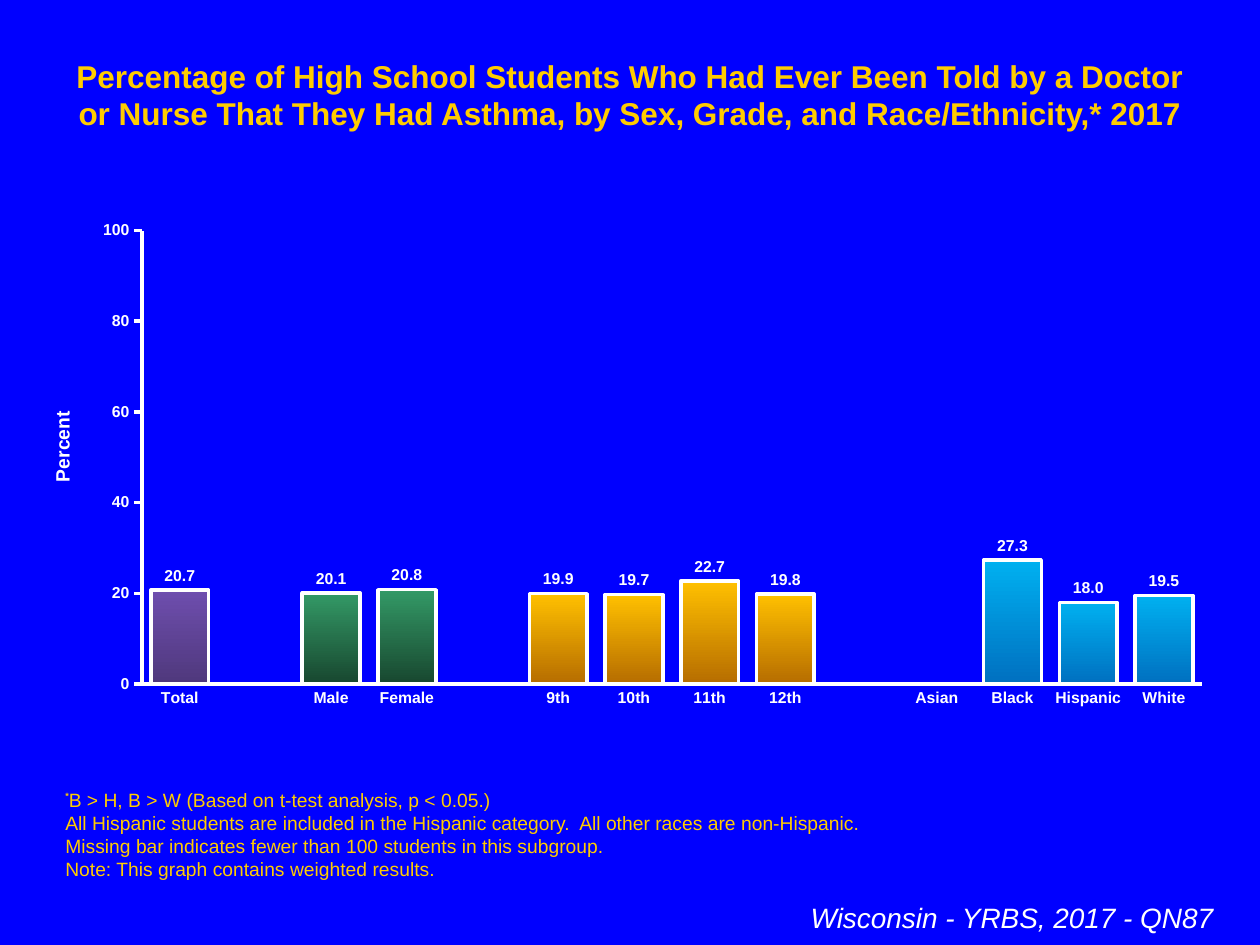
from lxml import etree
from pptx import Presentation
from pptx.chart.data import CategoryChartData
from pptx.dml.color import RGBColor
from pptx.enum.chart import XL_CHART_TYPE as ChartType
from pptx.enum.chart import XL_LABEL_POSITION as LabelPosition
from pptx.enum.chart import XL_TICK_MARK as TickMark
from pptx.enum.text import MSO_ANCHOR as Anchor
from pptx.enum.text import MSO_AUTO_SIZE as AutoSize
from pptx.enum.text import PP_ALIGN as Align
from pptx.oxml.ns import qn
from pptx.util import Inches, Pt

BLUE, GOLD, WHITE = "0000FF", "FFCC00", "FFFFFF"
GROUPS = [
    (("6E4EAE", "4F387C"), [("Total", 20.7)]),
    (("339966", "18472F"), [("Male", 20.1), ("Female", 20.8)]),
    (("FFC000", "B66D00"), [("9th", 19.9), ("10th", 19.7), ("11th", 22.7), ("12th", 19.8)]),
    (("00B0F0", "0070C0"), [("Asian", None), ("Black", 27.3), ("Hispanic", 18.0), ("White", 19.5)]),
]
NOTES = [
    [("*", 9, True, 50), ("B > H, B > W (Based on t-test analysis, p < 0.05.)", 11, False, 0)],
    [("All Hispanic students are included in the Hispanic category.  "
      "All other races are non-Hispanic.", 11, False, 0)],
    [("Missing bar indicates fewer than 100 students in this subgroup.", 11, False, 0)],
    [("Note: This graph contains weighted results.", 11, False, 0)],
]


def rgb(value):
    """Turn a hex string into a colour."""
    return RGBColor.from_string(value)


def style_font(font, size, color, bold=False, italic=False):
    """Set the face, size, colour and weight of a font."""
    font.name, font.size, font.bold, font.italic = "Arial", Pt(size), bold, italic
    font.color.rgb = rgb(color)


def add_text(slide, box, lines, color, align=Align.LEFT, anchor=Anchor.TOP, italic=False):
    """Add a text box from lines of (text, size, bold, baseline) runs."""
    frame = slide.shapes.add_textbox(*map(Inches, box)).text_frame
    frame.word_wrap, frame.vertical_anchor = True, anchor
    frame.auto_size = AutoSize.SHAPE_TO_FIT_TEXT
    for index, line in enumerate(lines):
        paragraph = frame.add_paragraph() if index else frame.paragraphs[0]
        paragraph.alignment = align
        for text, size, bold, baseline in line:
            run = paragraph.add_run()
            run.text = text
            style_font(run.font, size, color, bold, italic)
            if baseline:
                run.font._element.set("baseline", str(baseline * 1000))


def set_layout(parent, before, **places):
    """Place a chart part by fractions of the chart area."""
    for old in parent.findall(qn("c:layout")):
        parent.remove(old)
    layout = etree.Element(qn("c:layout"))
    manual = etree.SubElement(layout, qn("c:manualLayout"))
    for name, value in places.items():
        etree.SubElement(manual, qn(f"c:{name}")).set("val", str(value))
    parent.find(qn(before)).addprevious(layout)


def style_axis(axis, tick):
    """Give an axis its white line, tick marks and bold labels."""
    axis.has_major_gridlines = False
    axis.major_tick_mark, axis.minor_tick_mark = tick, TickMark.NONE
    axis.format.line.color.rgb = rgb(WHITE)
    axis.format.line.width = Pt(2)
    style_font(axis.tick_labels.font, 9, WHITE, bold=True)


def style_value_axis(axis):
    """Scale the percent axis and give it a title."""
    style_axis(axis, TickMark.OUTSIDE)
    axis.minimum_scale, axis.maximum_scale, axis.major_unit = 0, 100, 20
    run = axis.axis_title.text_frame.paragraphs[0].add_run()
    run.text = "Percent"
    style_font(run.font, 11, WHITE, bold=True)
    set_layout(axis.axis_title._element, "c:overlay", xMode="edge", yMode="edge", x=0.02, y=0.39)


def style_bar(point, colors):
    """Fill a bar with a downward gradient and outline it in white."""
    fill = point.format.fill
    fill.gradient()
    fill.gradient_angle = 270
    for stop, color in zip(fill.gradient_stops, colors):
        stop.color.rgb = rgb(color)
    point.format.line.color.rgb = rgb(WHITE)
    point.format.line.width = Pt(2)


def style_labels(labels):
    """Show bar values with one decimal above the bars."""
    labels.show_value = True
    labels.number_format, labels.number_format_is_linked = "#,##0.0", False
    labels.position = LabelPosition.OUTSIDE_END
    style_font(labels.font, 9, WHITE, bold=True)


def add_asthma_chart(slide, box):
    """Add the column chart, with an empty slot between groups."""
    bars = []
    for colors, group in GROUPS:
        if bars:
            bars.append(("", None, None))
        bars += [(name, value, colors) for name, value in group]
    data = CategoryChartData()
    data.categories = [name for name, _, _ in bars]
    data.add_series("Series 1", [value for _, value, _ in bars])
    chart = slide.shapes.add_chart(ChartType.COLUMN_CLUSTERED, *map(Inches, box), data).chart
    chart.has_legend = chart.has_title = False
    style_font(chart.font, 18, WHITE)
    style_axis(chart.category_axis, TickMark.NONE)
    style_value_axis(chart.value_axis)
    plot = chart.plots[0]
    plot.gap_width, plot.overlap, plot.vary_by_categories = 31, 100, False
    series = plot.series[0]
    series.format.fill.solid()
    series.format.fill.fore_color.rgb = rgb("26CA59")
    for index, (_, _, colors) in enumerate(bars):
        if colors:
            style_bar(series.points[index], colors)
    style_labels(series.data_labels)
    set_layout(chart._chartSpace.chart.plotArea, "c:barChart", layoutTarget="inner",
               xMode="edge", yMode="edge", x=0.1, y=0.04, w=0.88, h=0.9)


def main():
    """Build the slide and save it."""
    presentation = Presentation()
    presentation.slide_width, presentation.slide_height = Inches(10), Inches(7.5)
    slide = presentation.slides.add_slide(presentation.slide_layouts[6])
    slide.background.fill.solid()
    slide.background.fill.fore_color.rgb = rgb(BLUE)
    title = ("Percentage of High School Students Who Had Ever Been Told by a Doctor "
             "or Nurse That They Had Asthma, by Sex, Grade, and Race/Ethnicity,* 2017")
    add_text(slide, (0.5, 0.4, 9, 0.4), [[(title, 18, True, 0)]], GOLD, Align.CENTER)
    add_text(slide, (0.42, 6.75, 9.17, 0.29), NOTES, GOLD, anchor=Anchor.BOTTOM)
    add_text(slide, (0.33, 7.1, 9.4, 0.37), [[("Wisconsin - YRBS, 2017 - QN87", 16, False, 0)]],
             WHITE, Align.RIGHT, italic=True)
    add_asthma_chart(slide, (0.17, 1.67, 9.56, 4))
    presentation.save("out.pptx")


if __name__ == "__main__":
    main()
